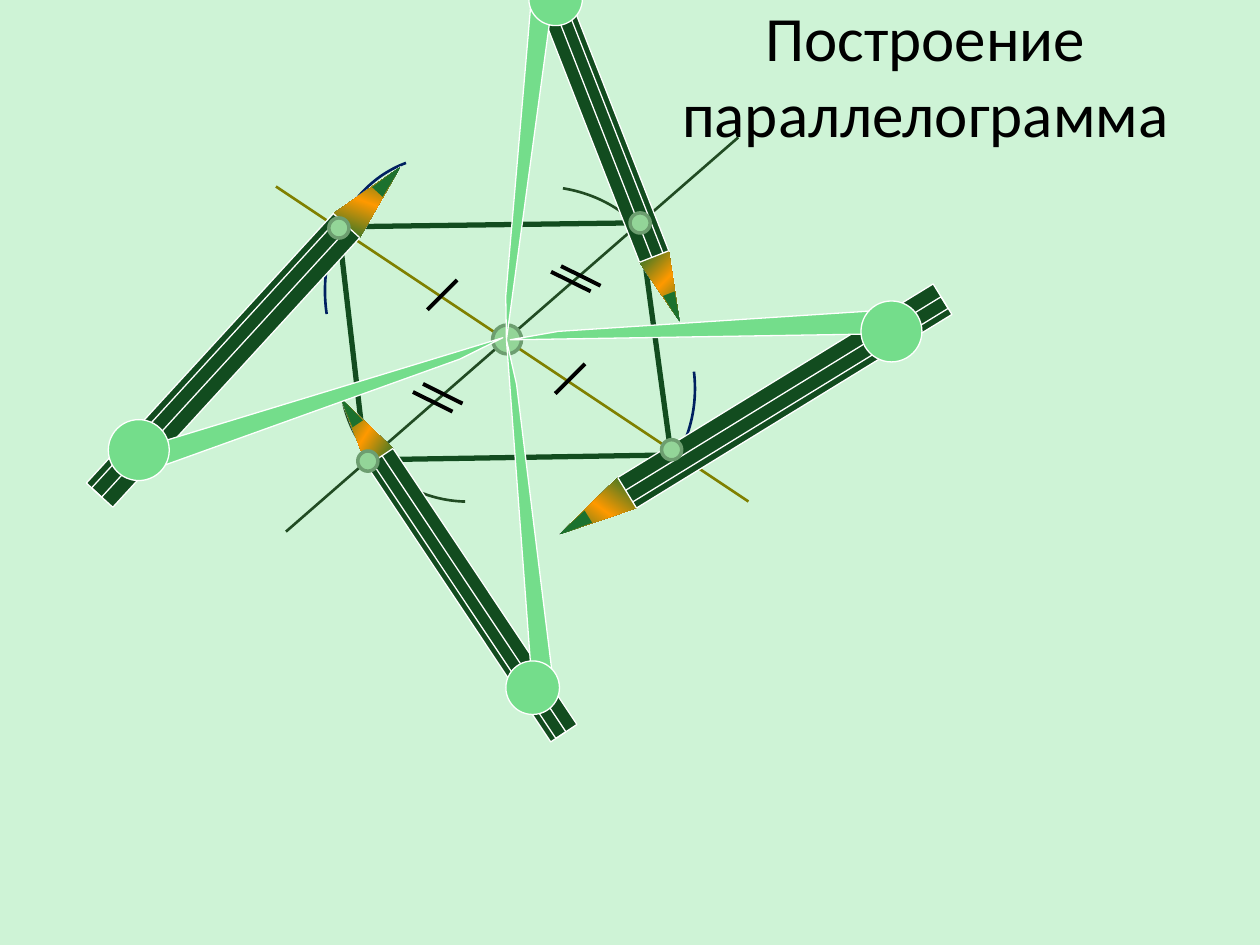
from math import hypot
from typing import NamedTuple

from pptx import Presentation
from pptx.dml.color import RGBColor
from pptx.enum.shapes import MSO_CONNECTOR, MSO_SHAPE
from pptx.enum.text import MSO_ANCHOR, MSO_AUTO_SIZE, PP_ALIGN
from pptx.oxml import parse_xml
from pptx.oxml.ns import nsdecls
from pptx.util import Pt

STRAIGHT = MSO_CONNECTOR.STRAIGHT
ARC = MSO_SHAPE.ARC
OVAL = MSO_SHAPE.OVAL
MIDDLE = MSO_ANCHOR.MIDDLE
CENTER = PP_ALIGN.CENTER
NO_FIT = MSO_AUTO_SIZE.NONE

MINT = RGBColor(0xCE, 0xF3, 0xD6)
PINE = RGBColor(0x12, 0x4C, 0x1F)
MOSS = RGBColor(0x21, 0x4B, 0x23)
NAVY = RGBColor(0x00, 0x20, 0x60)
OLIVE = RGBColor(0x7F, 0x80, 0x00)
LEAF = RGBColor(0x93, 0xD5, 0x98)
SAGE = RGBColor(0x6D, 0x9E, 0x70)
LIME = RGBColor(0x74, 0xDD, 0x8B)
LEAD = RGBColor(0x1B, 0x71, 0x2E)
EDGE = RGBColor(0x1A, 0x71, 0x2D)
AMBER = RGBColor(0xFF, 0x99, 0x00)
WHITE = RGBColor(0xFF, 0xFF, 0xFF)
BLACK = RGBColor(0x00, 0x00, 0x00)


class Point(NamedTuple):
    x: float
    y: float


class Line(NamedTuple):
    start: Point
    end: Point
    color: RGBColor
    width: float


class Arc(NamedTuple):
    left: float
    top: float
    width: float
    height: float
    turn: float
    start: float
    end: float
    color: RGBColor


class Dot(NamedTuple):
    mid: Point
    width: float
    height: float
    fill: RGBColor
    edge: RGBColor
    weight: float


class Compass(NamedTuple):
    tail: Point
    tip: Point
    hinge: Point
    leg: list[Point]
    size: float
    turn: float


SIDES = [
    Line(Point(365.8, 129.6), Point(383, 256.3), PINE, 3),
    Line(Point(193.7, 131.8), Point(208.8, 262.8), PINE, 3),
    Line(Point(208, 262.8), Point(389.5, 259.9), PINE, 3),
    Line(Point(195.8, 129.6), Point(360, 127.4), PINE, 3),
]
ARCS = [
    Arc(194.4, 145.4, 144.7, 141.1, 194.8, 153.57, 201.6, MOSS),
    Arc(253.4, 150.5, 150.5, 136.1, 76.2, 167.18, 0, NAVY),
    Arc(236.2, 106.6, 146.9, 129.6, 3.3, 166.47, 0, MOSS),
    Arc(175.7, 99.4, 156.2, 136.1, 266.4, 158.09, 208.36, NAVY),
]
CROSS = [
    Line(Point(421.9, 78.5), Point(163.4, 303.8), MOSS, 1.5),
    Line(Point(157.7, 106.6), Point(427.7, 286.6), OLIVE, 1.5),
]
FOCUS = Point(289.8, 194)
TOOLS = [
    Compass(Point(304.2, -31.3), Point(388.4, 183.8), Point(317.5, -0.7),
            [Point(315.4, 2.9), Point(289.4, 194.2), Point(289, 169.2),
             Point(304.6, -12.2)], 18, 0),
    Compass(Point(322.2, 419), Point(195, 228), Point(304.4, 393),
            [Point(303.8, 387.4), Point(289.4, 194.2), Point(295.2, 219.6),
             Point(317.5, 400.3)], 18, 168),
    Compass(Point(538.6, 171), Point(319.6, 305.4), Point(509.4, 189.4),
            [Point(504, 190.8), Point(291.6, 194.2), Point(319, 189.4),
             Point(518.4, 176.4)], 20.5, 81),
    Compass(Point(56.9, 283), Point(228.8, 95.4), Point(79.3, 257.2),
            [Point(84.2, 254.9), Point(287.3, 193), Point(262.8, 205.2),
             Point(74.2, 272.9)], 20.5, 245),
]
NODES = [Point(210.2, 263.5), Point(193.7, 130.3),
         Point(365.8, 127.4), Point(383.8, 257)]
SINGLE = Point(8.5, -8.5)
DOUBLE = Point(11.3, 5.6)
TICKS = [
    (Point(252.7, 168.5), SINGLE), (Point(325.8, 216.4), SINGLE),
    (Point(247.3, 229.6), DOUBLE), (Point(331.9, 157.7), DOUBLE),
    (Point(326.2, 160.9), DOUBLE), (Point(253, 225), DOUBLE),
]


def draw_line(slide, line: Line) -> None:
    link = slide.shapes.add_connector(
        STRAIGHT, *(Pt(v) for v in (*line.start, *line.end)))
    link.line.color.rgb = line.color
    link.line.width = Pt(line.width)
    link._element.spPr.append(parse_xml(f"<a:effectLst {nsdecls('a')}/>"))


def draw_arc(slide, arc: Arc) -> None:
    shape = slide.shapes.add_shape(
        ARC, Pt(arc.left), Pt(arc.top), Pt(arc.width), Pt(arc.height))
    shape.adjustments[0] = arc.start
    shape.adjustments[1] = arc.end
    shape.rotation = arc.turn
    shape.shadow.inherit = False
    shape.fill.background()
    shape.line.color.rgb = arc.color
    shape.line.width = Pt(1.5)


def draw_dot(slide, dot: Dot) -> None:
    shape = slide.shapes.add_shape(
        OVAL, Pt(dot.mid.x - dot.width / 2), Pt(dot.mid.y - dot.height / 2),
        Pt(dot.width), Pt(dot.height))
    shape.shadow.inherit = False
    shape.fill.solid()
    shape.fill.fore_color.rgb = dot.fill
    shape.line.color.rgb = dot.edge
    shape.line.width = Pt(dot.weight)


def draw_path(slide, points: list[Point], fill: RGBColor | None,
              edge: RGBColor | None, close: bool = True):
    spots = [(Pt(p.x), Pt(p.y)) for p in points]
    pen = slide.shapes.build_freeform(*spots[0])
    pen.add_line_segments(spots[1:], close=close)
    shape = pen.convert_to_shape()
    shape.shadow.inherit = False
    if fill is None:
        shape.fill.background()
    else:
        shape.fill.solid()
        shape.fill.fore_color.rgb = fill
    if edge is None:
        shape.line.fill.background()
    else:
        shape.line.color.rgb = edge
        shape.line.width = Pt(0.75)
    return shape


def shade(shape, turn: float) -> None:
    stops = "".join(
        f'<a:gs pos="{pos}"><a:srgbClr val="{color}"/></a:gs>'
        for pos, color in ((0, EDGE), (50000, AMBER), (100000, EDGE)))
    angle = int((turn + 45) % 360 * 60000)
    props = shape._element.spPr
    solid = props.find("{*}solidFill")
    props.replace(solid, parse_xml(
        f'<a:gradFill {nsdecls("a")} rotWithShape="1"><a:gsLst>{stops}</a:gsLst>'
        f'<a:lin ang="{angle}" scaled="0"/></a:gradFill>'))


def draw_tool(slide, tool: Compass) -> None:
    dx, dy = tool.tip.x - tool.tail.x, tool.tip.y - tool.tail.y
    span = hypot(dx, dy)
    ux, uy = dx / span, dy / span
    half = tool.size / 2

    def spot(along: float, side: float) -> Point:
        off = side * half
        return Point(tool.tail.x + along * ux - off * uy,
                     tool.tail.y + along * uy + off * ux)

    neck = span - 2.22 * tool.size
    point = span - 0.95 * tool.size
    draw_path(slide, [spot(0, 1), spot(0, -1), spot(neck, -1), tool.tip,
                      spot(neck, 1)], PINE, WHITE)
    wood = draw_path(slide, [tool.tip, spot(neck, -1), spot(neck, 1)],
                     AMBER, None)
    shade(wood, tool.turn)
    draw_path(slide, [spot(point, 0.4), spot(point, -0.4), tool.tip],
              LEAD, None)
    draw_path(slide, [spot(neck, 1), spot(neck, -1), spot(neck, -0.6),
                      spot(0, -0.6), spot(0, 0.16), spot(neck, 0.16)],
              None, WHITE, close=False)
    draw_path(slide, tool.leg, LIME, WHITE, close=False)
    wide = 1.7 * tool.size
    draw_dot(slide, Dot(tool.hinge, wide, wide, LIME, WHITE, 0.75))


def draw_title(slide) -> None:
    title = slide.shapes.title
    title.left, title.top = Pt(314.6), Pt(11.5)
    title.width, title.height = Pt(428.4), Pt(61.9)
    frame = title.text_frame
    frame.text = "Построение параллелограмма"
    frame.word_wrap = True
    frame.auto_size = NO_FIT
    frame.vertical_anchor = MIDDLE
    para = frame.paragraphs[0]
    para.alignment = CENTER
    font = para.runs[0].font
    font.name = "Calibri"
    font.size = Pt(36)
    font.color.rgb = BLACK
    slide.shapes._spTree.append(title._element)


def main() -> None:
    deck = Presentation()
    deck.slide_width, deck.slide_height = Pt(720), Pt(540)
    slide = deck.slides.add_slide(deck.slide_layouts[5])
    slide.background.fill.solid()
    slide.background.fill.fore_color.rgb = MINT
    for side in SIDES:
        draw_line(slide, side)
    for arc in ARCS:
        draw_arc(slide, arc)
    for line in CROSS:
        draw_line(slide, line)
    draw_dot(slide, Dot(FOCUS, 16.5, 16.5, LEAF, SAGE, 2))
    for tool in TOOLS:
        draw_tool(slide, tool)
    for node in NODES:
        draw_dot(slide, Dot(node, 11.5, 11.5, LEAF, SAGE, 2))
    draw_title(slide)
    for mid, half in TICKS:
        draw_line(slide, Line(Point(mid.x - half.x, mid.y - half.y),
                              Point(mid.x + half.x, mid.y + half.y), BLACK, 2.25))
    deck.save("out.pptx")


if __name__ == "__main__":
    main()
